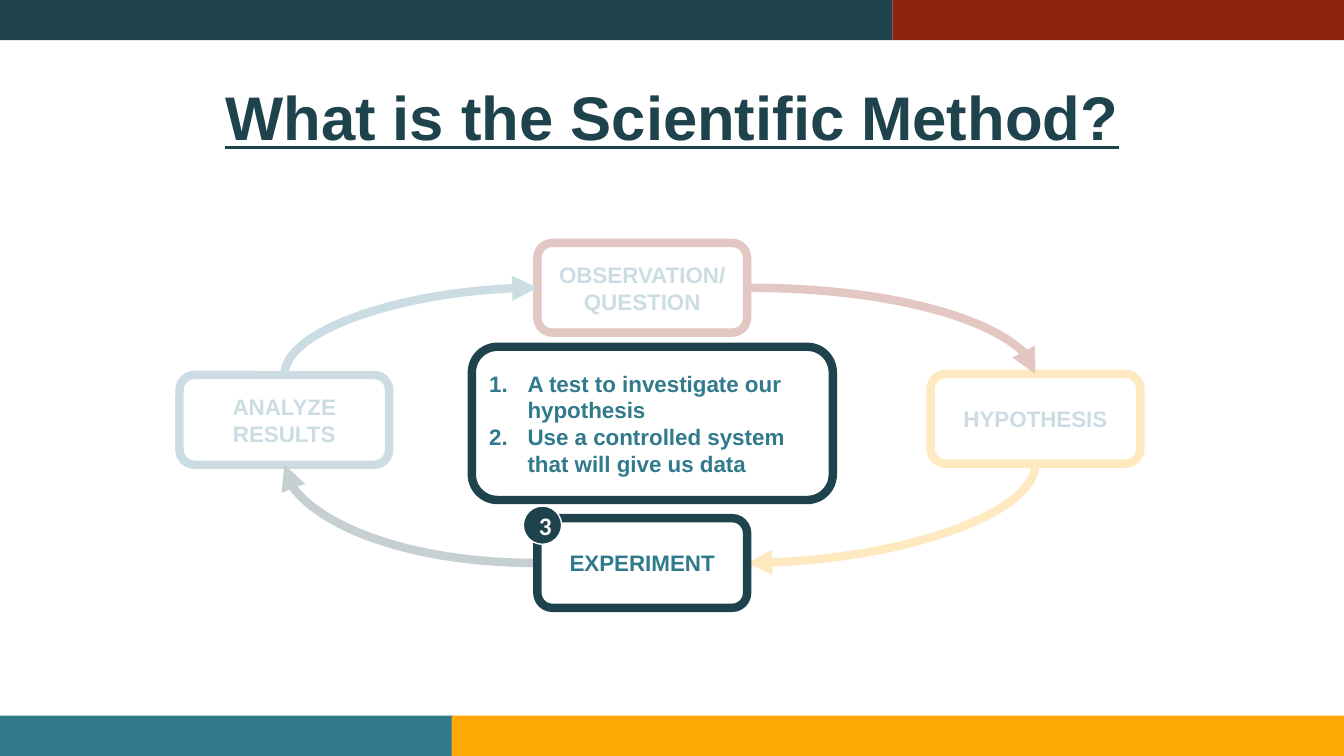
from dataclasses import dataclass

from lxml import etree
from pptx import Presentation
from pptx import util as u
from pptx.dml.color import RGBColor
from pptx.enum import shapes, text
from pptx.oxml import ns

TOP, LEFT, BOTTOM, RIGHT = range(4)


@dataclass(frozen=True)
class Theme:
    navy: str = "1E434C"
    teal: str = "307A8C"
    red: str = "8D230F"
    amber: str = "FEA905"
    white: str = "FFFFFF"
    font: str = "Arial"
    badge_font: str = "Calibri"
    title: int = 44
    body: int = 16
    badge: int = 18
    stroke: int = 6


def rgb(value):
    return RGBColor.from_string(value)


def add(parent, tag, **attrs):
    return etree.SubElement(parent, ns.qn(tag), attrs)


class Deck:
    def __init__(self, prs, theme):
        self.theme = theme
        self.slide = prs.slides.add_slide(prs.slide_layouts[6])

    def shape(self, kind, box, fill, line=None, width=0):
        sp = self.slide.shapes.add_shape(kind, *map(u.Inches, box))
        sp.shadow.inherit = False
        sp.fill.solid()
        sp.fill.fore_color.rgb = rgb(fill)
        if line:
            sp.line.color.rgb = rgb(line)
            sp.line.width = u.Pt(width)
        else:
            sp.line.fill.background()
        return sp

    def bar(self, box, fill):
        return self.shape(shapes.MSO_SHAPE.RECTANGLE, box, fill)

    def veil(self, box, opacity):
        sp = self.bar(box, self.theme.white)
        color = sp._element.spPr.find(ns.qn("a:solidFill"))[0]
        add(color, "a:alpha", val=str(opacity * 1000))

    def label(self, sp, content, size, color, font=None, align=text.PP_ALIGN.CENTER):
        tf = sp.text_frame
        tf.text = content
        tf.word_wrap = True
        tf.vertical_anchor = text.MSO_ANCHOR.MIDDLE
        for p in tf.paragraphs:
            p.alignment = align
            for r in p.runs:
                r.font.size = u.Pt(size)
                r.font.name = font or self.theme.font
                r.font.bold = True
                r.font.color.rgb = rgb(color)
        return tf

    def title(self, box, content):
        sp = self.slide.shapes.add_textbox(*map(u.Inches, box))
        p = self.label(sp, content, self.theme.title, self.theme.navy).paragraphs[0]
        p.line_spacing = 0.9
        p.runs[0].font.underline = True

    def card(self, box, content, line, align=text.PP_ALIGN.CENTER):
        th = self.theme
        sp = self.shape(shapes.MSO_SHAPE.ROUNDED_RECTANGLE, box, th.white, line, th.stroke)
        tf = self.label(sp, content, th.body, th.teal, align=align)
        tf.margin_left = tf.margin_right = tf.margin_top = tf.margin_bottom = u.Inches(0.1)
        return sp

    def numbered_card(self, box, items, line):
        sp = self.card(box, "\n".join(items), line, text.PP_ALIGN.LEFT)
        indent = u.Inches(0.38)
        for p in sp.text_frame.paragraphs:
            pr = p._p.get_or_add_pPr()
            pr.set("marL", str(indent))
            pr.set("indent", str(-indent))
            add(add(pr, "a:buClr"), "a:srgbClr", val=self.theme.teal)
            add(pr, "a:buAutoNum", type="arabicPeriod")

    def badge(self, box, content):
        th = self.theme
        sp = self.shape(shapes.MSO_SHAPE.OVAL, box, th.navy, th.white, 1)
        self.label(sp, content, th.badge, th.white, th.badge_font)

    def arrow(self, start, start_side, end, end_side, color, turn=0, flip=False):
        cx = self.slide.shapes.add_connector(shapes.MSO_CONNECTOR.CURVE, 0, 0, 0, 0)
        cx.begin_connect(start, start_side)
        cx.end_connect(end, end_side)
        if turn % 180:
            w, h = cx.width, cx.height
            cx.left += (w - h) // 2
            cx.top += (h - w) // 2
            cx.width, cx.height = h, w
        pr = cx._element.spPr
        xfrm = pr.find(ns.qn("a:xfrm"))
        xfrm.set("rot", str(turn * 60000))
        for name in ("flipH", "flipV"):
            xfrm.set(name, str(int(flip)))
        pr.find(ns.qn("a:prstGeom")).set("prst", "curvedConnector2")
        cx.line.color.rgb = rgb(color)
        cx.line.width = u.Pt(self.theme.stroke)
        add(pr.find(ns.qn("a:ln")), "a:tailEnd", type="triangle")
        add(pr, "a:effectLst")

    def bring_to_front(self, sp):
        self.slide.shapes._spTree.append(sp._element)


def main():
    prs = Presentation()
    prs.slide_width, prs.slide_height = u.Inches(13.33), u.Inches(7.5)
    th = Theme()
    deck = Deck(prs, th)

    deck.bar((8.85, 0, 4.48, 0.4), th.red)
    deck.bar((0, 0, 8.85, 0.4), th.navy)
    deck.bar((0, 7.1, 4.5, 0.4), th.teal)
    deck.bar((4.48, 7.1, 8.85, 0.4), th.amber)
    deck.title((1.14, 0.55, 11.06, 1.3), "What is the Scientific Method?")

    size = (2.08, 0.89)
    observation = deck.card((5.33, 2.41, *size), "OBSERVATION/\nQUESTION", th.red)
    hypothesis = deck.card((9.23, 3.71, *size), "HYPOTHESIS", th.amber)
    analysis = deck.card((1.78, 3.72, *size), "ANALYZE RESULTS", th.teal)
    experiment = deck.card((5.33, 5.14, *size), "EXPERIMENT", th.navy)

    deck.arrow(observation, RIGHT, hypothesis, TOP, th.red)
    deck.arrow(hypothesis, BOTTOM, experiment, RIGHT, th.amber, 90)
    deck.arrow(experiment, LEFT, analysis, BOTTOM, th.navy, 180)
    deck.arrow(analysis, TOP, observation, LEFT, th.teal, 90, True)

    deck.veil((1.56, 1.85, 10.22, 4.61), 75)
    deck.numbered_card(
        (4.68, 3.44, 3.58, 1.52),
        ["A test to investigate our hypothesis", "Use a controlled system that will give us data"],
        th.navy,
    )
    deck.bring_to_front(experiment)
    deck.badge((5.19, 5.02, 0.38, 0.38), "3")

    prs.save("out.pptx")


if __name__ == "__main__":
    main()
